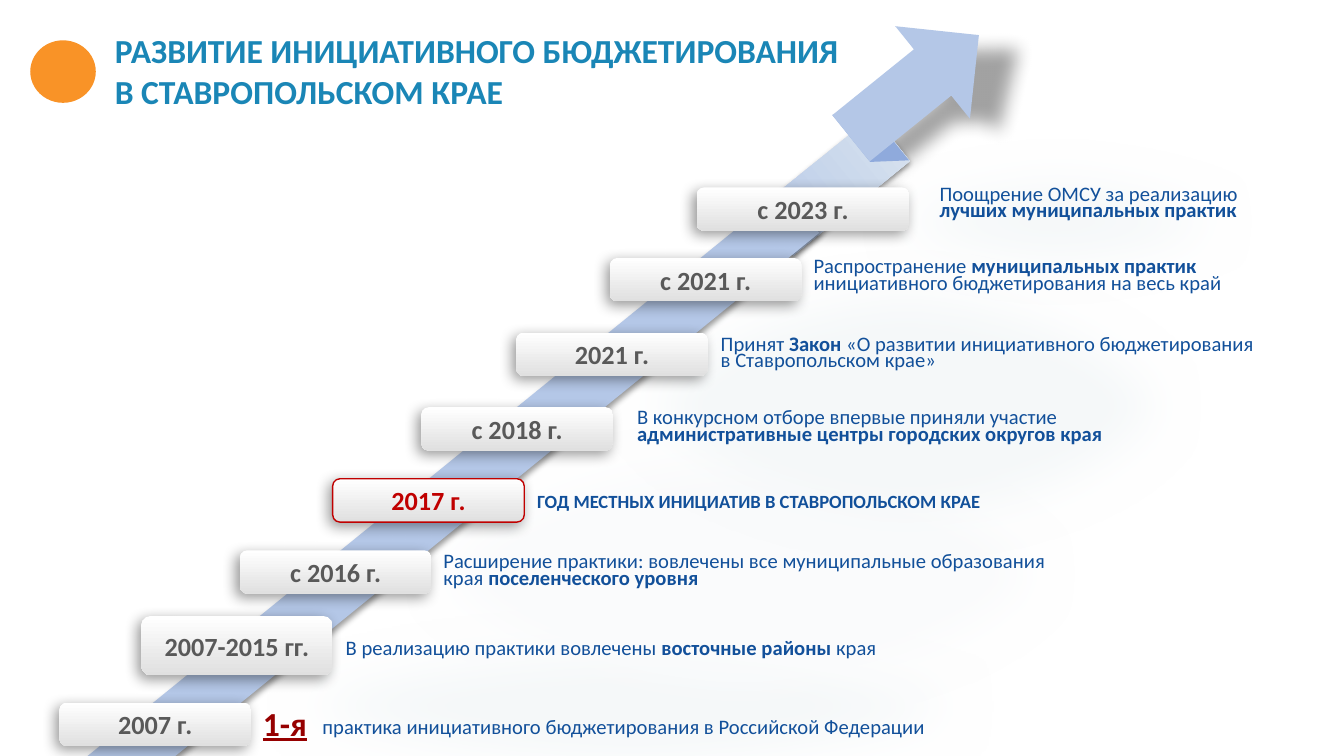
from lxml import etree
from pptx import Presentation
from pptx import util as u
from pptx.dml.color import RGBColor
from pptx.enum import shapes, text
from pptx.oxml.ns import qn

THEME = {
    "font": "Calibri",
    "title": {"size": 24, "color": "1A86B6", "bold": True},
    "note": {"size": 14.7, "color": "12509A"},
    "slogan": {"size": 13.3, "color": "12509A"},
    "first": {"size": 24, "color": "960000", "bold": True, "underline": True},
    "badge": {"size": 18.7, "color": "595959", "bold": True},
    "highlight": {"size": 18.7, "color": "C00000", "bold": True},
    "badge_fill": ("FFFFFF", "E0E0E0"),
    "tail_fill": ("DAE4EF", "B4C7E7"),
    "arrow": "B4C7E7",
    "fold": "8FAADC",
    "shade": "000000",
    "emblem": "F99327",
}

TITLE = [[("РАЗВИТИЕ ИНИЦИАТИВНОГО БЮДЖЕТИРОВАНИЯ", True)], [("В СТАВРОПОЛЬСКОМ КРАЕ", True)]]

CLOUDS = [
    ((2.07, 5.99, 8.35, 2.02), "F5F8F9"),
    ((3.77, 4.1, 7.13, 3.18), "FAFBFC"),
    ((5.87, 2.44, 6.22, 3.18), "F5F8F9"),
    ((8.01, 1.33, 4.94, 1.74), "F5F8F9"),
]

BADGE_WIDTH, BADGE_HEIGHT = 1.9, 0.43
TIGHT, LOOSE = u.Pt(12), 1.15

MILESTONES = [
    {"label": "2007 г.", "at": (0.59, 6.97), "note_at": (3.1, 7, 8.11, 0.38), "spacing": LOOSE,
     "note": [[("практика инициативного бюджетирования в Российской Федерации", False)]]},
    {"label": "2007-2015 гг.", "at": (1.4, 6.11), "height": 0.59,
     "note_at": (3.33, 6.21, 8.87, 0.38), "spacing": LOOSE,
     "note": [[("В реализацию практики вовлечены ", False), ("восточные районы ", True),
               ("края", False)]]},
    {"label": "с 2016 г.", "at": (2.38, 5.46), "note_at": (4.3, 5.47, 6.4, 0.44),
     "note": [[("Расширение практики: вовлечены все муниципальные образования края ", False),
               ("поселенческого уровня", True)]]},
    {"label": "2017 г.", "at": (3.3, 4.75), "note_at": (5.23, 4.78, 5.86, 0.36),
     "spacing": LOOSE, "badge_style": "highlight", "note_style": "slogan",
     "note": [[("ГОД МЕСТНЫХ ИНИЦИАТИВ В СТАВРОПОЛЬСКОМ КРАЕ", True)]]},
    {"label": "с 2018 г.", "at": (4.18, 4.04), "note_at": (6.22, 4.04, 5.7, 0.44),
     "note": [[("В конкурсном отборе впервые приняли участие ", False),
               ("административные центры городских округов края", True)]]},
    {"label": "2021 г.", "at": (5.12, 3.3), "note_at": (7.05, 3.31, 5.86, 0.44),
     "note": [[("Принят ", False), ("Закон", True),
               (" «О развитии инициативного бюджетирования", False)],
              [("в Ставропольском крае»", False)]]},
    {"label": "с 2021 г.", "at": (6.05, 2.56), "note_at": (7.97, 2.54, 4.71, 0.44),
     "note": [[("Распространение ", False), ("муниципальных практик ", True),
               ("инициативного бюджетирования на весь край", False)]]},
    {"label": "с 2023 г.", "at": (6.91, 1.86), "width": 2.11, "note_at": (9.22, 1.82, 3.46, 0.44),
     "note": [[("Поощрение ОМСУ за реализацию", False)],
              [("лучших муниципальных практик", True)]]},
]

deck = Presentation()
deck.slide_width, deck.slide_height = u.Inches(13.33), u.Inches(7.5)
page = deck.slides.add_slide(deck.slide_layouts[6])
KIND = shapes.MSO_SHAPE


def add_effect(shape, name, **values):
    effects = shape._element.spPr.find(qn("a:effectLst"))
    return etree.SubElement(effects, qn("a:" + name), {key: str(v) for key, v in values.items()})


def cast_shadow(shape, blur, distance, angle):
    shadow = add_effect(shape, "outerShdw", blurRad=u.Pt(blur), dist=u.Pt(distance),
                        dir=angle * 60000, algn="ctr", rotWithShape=0)
    color = etree.SubElement(shadow, qn("a:srgbClr"), val=THEME["shade"])
    etree.SubElement(color, qn("a:alpha"), val="40000")


def soften(shape, radius):
    add_effect(shape, "softEdge", rad=u.Inches(radius))


def draw(kind, at, fill, rotation=0, adjust=(), angle=0):
    shape = page.shapes.add_shape(kind, *map(u.Inches, at))
    shape.shadow.inherit = False
    shape.rotation = rotation
    shape.line.fill.background()
    for index, value in enumerate(adjust):
        shape.adjustments[index] = value
    if isinstance(fill, tuple):
        shape.fill.gradient()
        shape.fill.gradient_angle = angle
        for position, (stop, color) in enumerate(zip(shape.fill.gradient_stops, fill)):
            stop.position = position
            stop.color.rgb = RGBColor.from_string(color)
    else:
        shape.fill.solid()
        shape.fill.fore_color.rgb = RGBColor.from_string(fill)
    return shape


def write(box, lines, style, spacing=None, align=text.PP_ALIGN.LEFT):
    for index, line in enumerate(lines):
        para = box.text_frame.paragraphs[0] if index == 0 else box.text_frame.add_paragraph()
        para.alignment = align
        para.line_spacing = spacing
        for words, bold in line:
            span = para.add_run()
            span.text = words
            values = {**THEME[style], "name": THEME["font"], "bold": bold}
            values["size"] = u.Pt(values["size"])
            span.font.color.rgb = RGBColor.from_string(values.pop("color"))
            for key, value in values.items():
                setattr(span.font, key, value)


def add_text(at, lines, style, spacing=None, wrap=True):
    box = page.shapes.add_textbox(*map(u.Inches, at))
    box.text_frame.word_wrap = wrap
    box.text_frame.auto_size = text.MSO_AUTO_SIZE.SHAPE_TO_FIT_TEXT
    write(box, lines, style, spacing)


def add_milestone(item):
    size = item.get("width", BADGE_WIDTH), item.get("height", BADGE_HEIGHT)
    badge = draw(KIND.ROUNDED_RECTANGLE, item["at"] + size, THEME["badge_fill"], angle=270)
    cast_shadow(badge, 10, 4, 135)
    style = item.get("badge_style", "badge")
    if style == "highlight":
        badge.line.color.rgb = RGBColor.from_string(THEME[style]["color"])
        badge.line.width = u.Pt(1)
    badge.text_frame.vertical_anchor = text.MSO_ANCHOR.MIDDLE
    badge.text_frame.word_wrap = True
    write(badge, [[(item["label"], True)]], style, align=text.PP_ALIGN.CENTER)
    add_text(item["note_at"], item["note"], item.get("note_style", "note"),
             item.get("spacing", TIGHT))


draw(KIND.OVAL, (0.3, 0.4, 0.65, 0.62), THEME["emblem"])
for at, color in CLOUDS:
    soften(draw(KIND.OVAL, at, color), 0.5)

SLOPE = 321.1
shade = draw(KIND.RIGHT_ARROW, (8.17, 0.1, 2.46, 1.95), THEME["shade"], SLOPE, (0.4, 0.64))
shade_color = shade._element.spPr.find(qn("a:solidFill"))[0]
etree.SubElement(shade_color, qn("a:alpha"), val="37000")
soften(shade, 0.18)
tail = draw(KIND.RECTANGLE, (7.52, 1.55, 1.49, 0.58), THEME["tail_fill"], SLOPE, angle=180)
cast_shadow(tail, 4, 2, 90)
draw(KIND.PARALLELOGRAM, (8.22, 1.21, 0.83, 0.31), THEME["fold"], SLOPE - 270, (0.74,))
draw(KIND.RIGHT_ARROW, (8.26, 0.27, 1.63, 1.18), THEME["arrow"], SLOPE)
ramp = draw(KIND.RECTANGLE, (-0.35, 4.77, 9.35, 0.55), THEME["arrow"], 320.9)
cast_shadow(ramp, 4, 3, 45)

add_text((1.04, 0.25, 7.53, 0.91), TITLE, "title", wrap=False)
for milestone in MILESTONES:
    add_milestone(milestone)
add_text((2.51, 6.92, 0.64, 0.5), [[("1-я", True)]], "first", wrap=False)

deck.save("out.pptx")
